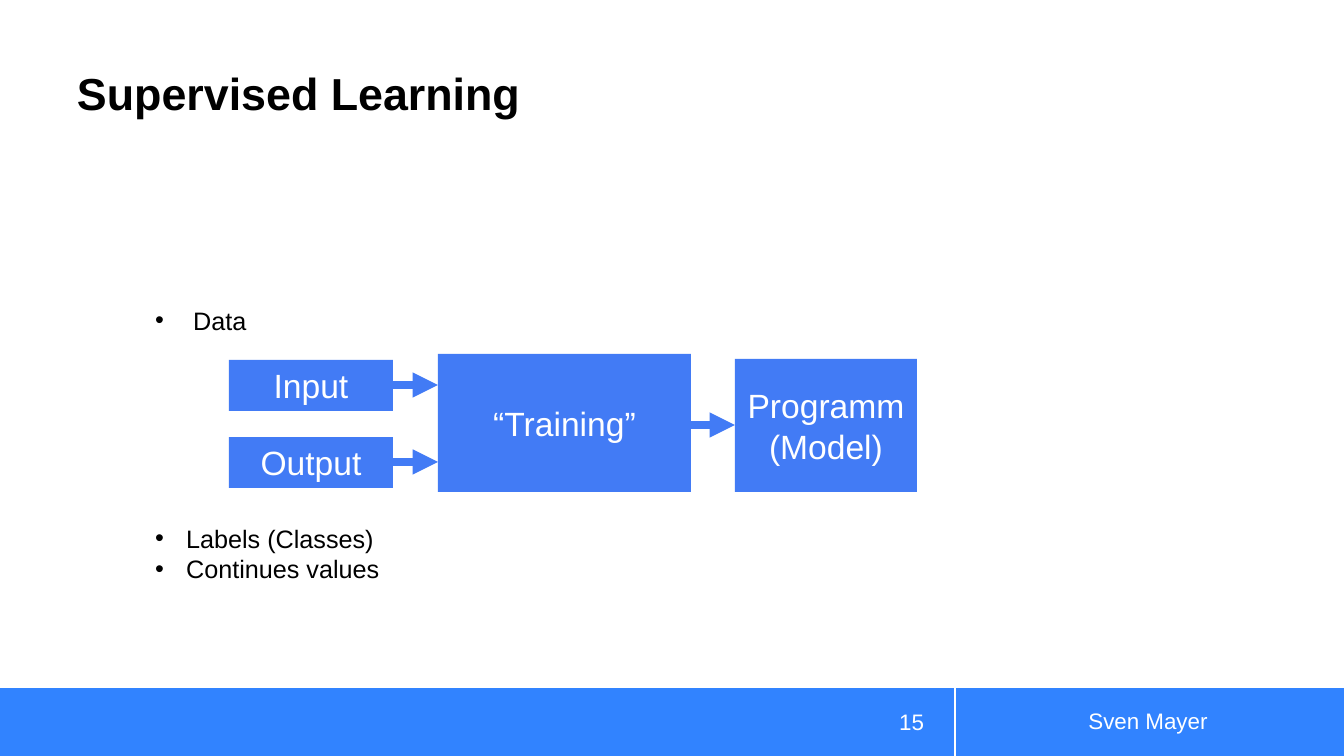
from pptx import Presentation
from pptx.dml.color import RGBColor
from pptx.enum.shapes import MSO_CONNECTOR as LINK, MSO_SHAPE as SHAPE
from pptx.enum.text import MSO_ANCHOR as ANCHOR, MSO_AUTO_SIZE as FIT, PP_ALIGN as ALIGN
from pptx.oxml.ns import qn
from pptx.util import Pt
from lxml.etree import SubElement as sub

BLACK = RGBColor(0x00, 0x00, 0x00)
WHITE = RGBColor(0xFF, 0xFF, 0xFF)
BAR = RGBColor(0x31, 0x83, 0xFF)
BLUE = RGBColor(0x42, 0x7B, 0xF5)


def px(n):
    """Pixels to EMU: 1344 px span 13.33 inches."""
    return round(n * 914400 / 100.8)


def place(shape, x, y, w, h):
    shape.left, shape.top = px(x), px(y)
    shape.width, shape.height = px(w), px(h)


def write(shape, *lines, size=24, color=WHITE, bold=False, align=ALIGN.CENTER,
          anchor=ANCHOR.MIDDLE, wrap=True, fit=FIT.NONE, space=1.0):
    """Fill a shape with one paragraph per line and format it."""
    frame = shape.text_frame
    frame.text = "\n".join(lines)
    frame.word_wrap, frame.auto_size = wrap, fit
    frame.vertical_anchor = anchor
    for para in frame.paragraphs:
        para.alignment, para.line_spacing = align, space
        para.space_before = para.space_after = Pt(0)
        font = para.runs[0].font
        font.name, font.size, font.bold = "Arial", Pt(size), bold
        font.color.rgb = color
    return frame


def box(slide, x, y, w, h, text="", fill=BLUE):
    rect = slide.shapes.add_shape(SHAPE.RECTANGLE, px(x), px(y), px(w), px(h))
    rect.shadow.inherit = False
    rect.fill.solid()
    rect.fill.fore_color.rgb = fill
    rect.line.fill.background()
    if text:
        write(rect, text)


def label(slide, x, y, w, h, text, **form):
    write(slide.shapes.add_textbox(px(x), px(y), px(w), px(h)), text, **form)


def arrow(slide, x, y, end):
    line = slide.shapes.add_connector(LINK.STRAIGHT, px(x), px(y), px(end), px(y))
    line.line.color.rgb = BLUE
    line.line.width = Pt(6)
    sub(line.line._get_or_add_ln(), qn("a:tailEnd"), type="triangle")
    sub(line._element.spPr, qn("a:effectLst"))


def bullets(holder, x, y, w, h, *items, indent):
    place(holder, x, y, w, h)
    frame = write(holder, *items, size=18, color=BLACK, align=ALIGN.LEFT,
                  anchor=ANCHOR.TOP, wrap=False, fit=FIT.SHAPE_TO_FIT_TEXT)
    for para in frame.paragraphs:
        props = para._p.get_or_add_pPr()
        props.set("marL", str(px(indent)))
        props.set("indent", str(-px(indent)))
        sub(props, qn("a:buFont"), typeface="Arial")
        sub(props, qn("a:buChar"), char="•")


def main():
    deck = Presentation()
    deck.slide_width, deck.slide_height = px(1344), px(756)
    slide = deck.slides.add_slide(deck.slide_layouts[3])
    title, data, values = slide.placeholders

    # Footer
    box(slide, 0, 688, 954, 68, fill=BAR)
    box(slide, 956, 688, 388, 68, fill=BAR)
    label(slide, 969, 701, 358, 40, "Sven Mayer", size=16)
    label(slide, 848, 702, 86, 40, "15", size=16, align=ALIGN.RIGHT)

    # Title
    place(title, 77, 13, 877, 107)
    frame = write(title, "Supervised Learning", size=32, color=BLACK, bold=True,
                  align=ALIGN.LEFT, anchor=ANCHOR.BOTTOM, space=0.9)
    frame.margin_left = frame.margin_right = 0
    frame.margin_top = frame.margin_bottom = 0

    # Data flow: input and output feed the training, which yields the model
    for y, name in ((360, "Input"), (437, "Output")):
        box(slide, 229, y, 164, 51, name)
        arrow(slide, 393, y + 25, 438)
    box(slide, 438, 354, 253, 138, "“Training”")
    arrow(slide, 691, 425, 735)
    box(slide, 735, 359, 182, 133, "Programm (Model)")

    # Lists
    bullets(data, 145, 300, 112, 40, "Data", indent=38)
    bullets(values, 145, 518, 247, 71, "Labels (Classes)", "Continues values", indent=31)

    deck.save("out.pptx")


if __name__ == "__main__":
    main()
